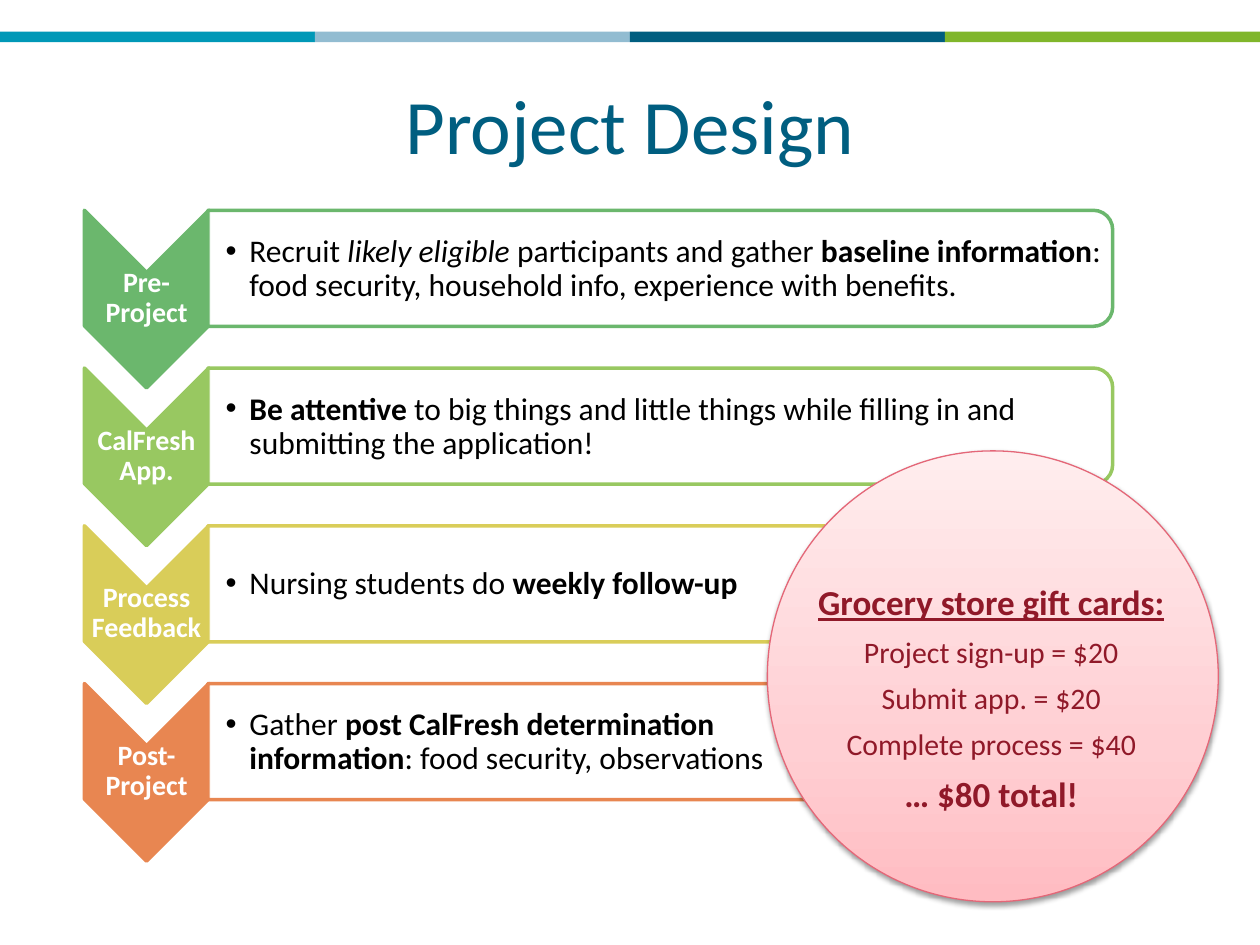
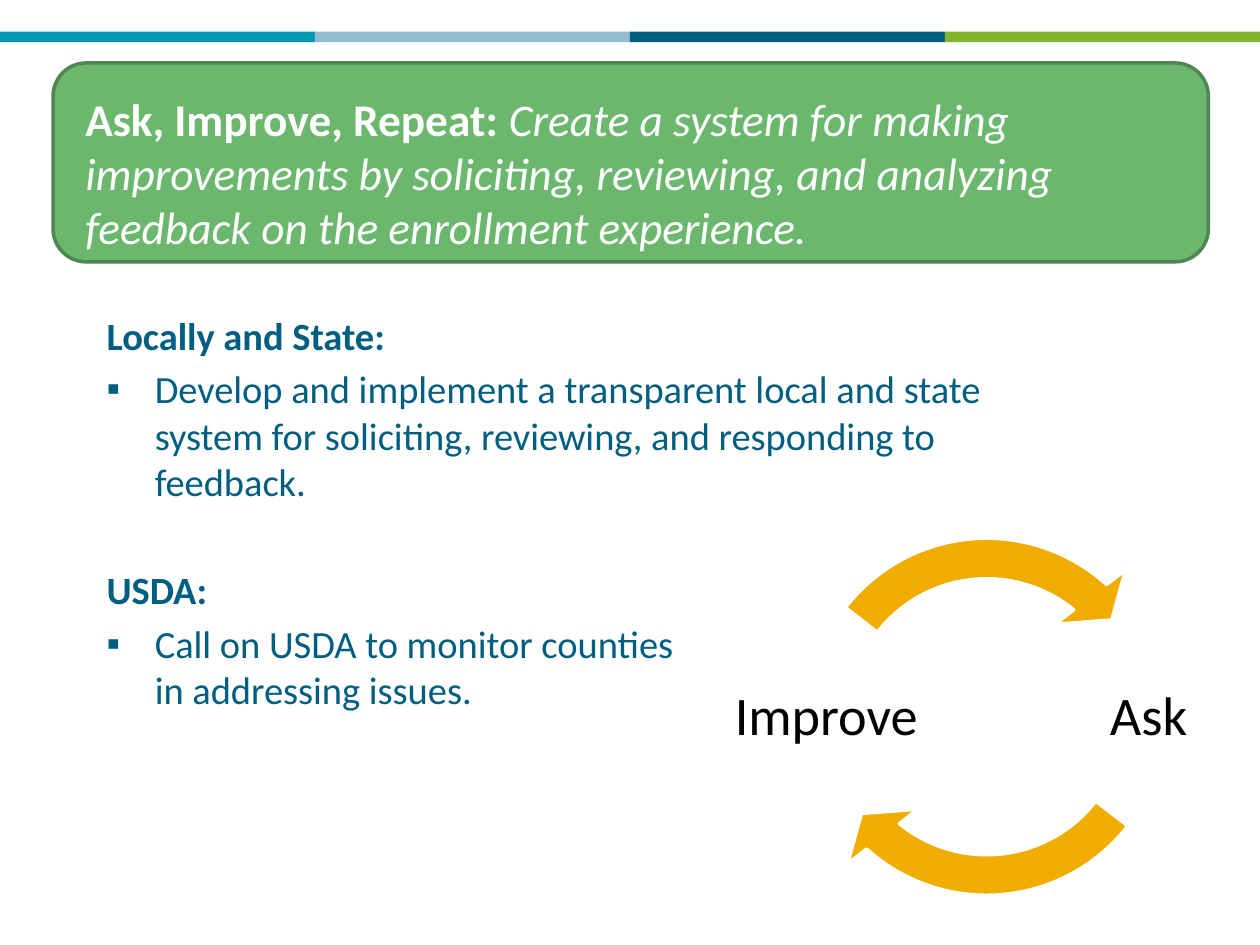
from collections import namedtuple
from copy import deepcopy

from lxml import etree
from pptx import Presentation
from pptx import util as u
from pptx.dml.color import RGBColor
from pptx.enum import shapes, text
from pptx.oxml.ns import qn

FONT = "Calibri"
WHITE = RGBColor(0xFF, 0xFF, 0xFF)
BLACK = RGBColor(0, 0, 0)
NAVY = RGBColor(0x00, 0x5E, 0x80)
TEAL = RGBColor(0x00, 0x98, 0xB7)
PALE_BLUE = RGBColor(0x92, 0xBC, 0xD1)
LEAF = RGBColor(0x80, 0xB6, 0x2B)
GREEN = RGBColor(0x6B, 0xB7, 0x6D)
DARK_GREEN = RGBColor(0x4F, 0x87, 0x51)
LIME = RGBColor(0x98, 0xC8, 0x61)
YELLOW = RGBColor(0xD9, 0xCD, 0x59)
ORANGE = RGBColor(0xE8, 0x86, 0x51)
AMBER = RGBColor(0xF0, 0xAD, 0x00)
ROSE = RGBColor(0xE4, 0x67, 0x78)
WINE = RGBColor(0x90, 0x19, 0x29)
PINKS = [(0, RGBColor(0xFF, 0xBC, 0xC2)), (0.35, RGBColor(0xFF, 0xCF, 0xD3)),
         (1, RGBColor(0xFF, 0xED, 0xEE))]

LEFT, CENTER = text.PP_ALIGN.LEFT, text.PP_ALIGN.CENTER
TOP, MIDDLE = text.MSO_ANCHOR.TOP, text.MSO_ANCHOR.MIDDLE
SHAPE = shapes.MSO_SHAPE

# runs: (words, style) pairs, the style holding any of b, i, u; "\n" breaks the line
Para = namedtuple("Para", "runs bullet indent before size", defaults=("", 0, 0, None))


def set_bullet(paragraph, char, indent, color):
    """Set a hanging bullet, or remove the inherited one when char is empty."""
    props = paragraph._p.get_or_add_pPr()
    props.set("marL", str(u.Cm(indent)))
    props.set("indent", str(-u.Cm(indent)))
    if not char:
        etree.SubElement(props, qn("a:buNone"))
        return
    tint = etree.SubElement(props, qn("a:buClr"))
    etree.SubElement(tint, qn("a:srgbClr"), val=str(color))
    etree.SubElement(props, qn("a:buFont"), typeface="Arial")
    etree.SubElement(props, qn("a:buChar"), char=char)


def write(frame, paras, *, size, color, align=LEFT, anchor=TOP, spacing=None,
          margins=(0.25, 0.13, 0.25, 0.13)):
    """Fill a text frame; margins are left, top, right, bottom in cm."""
    frame.word_wrap = True
    frame.auto_size = text.MSO_AUTO_SIZE.NONE
    frame.vertical_anchor = anchor
    (frame.margin_left, frame.margin_top,
     frame.margin_right, frame.margin_bottom) = map(u.Cm, margins)
    for index, para in enumerate(paras):
        paragraph = frame.add_paragraph() if index else frame.paragraphs[0]
        set_bullet(paragraph, para.bullet, para.indent, color)
        paragraph.alignment = align
        paragraph.space_before = u.Pt(para.before)
        if spacing:
            paragraph.line_spacing = spacing
        for words, style in para.runs:
            if words == "\n":
                paragraph.add_line_break()
                continue
            run = paragraph.add_run()
            run.text = words
            font = run.font
            font.name, font.size = FONT, u.Pt(para.size or size)
            font.color.rgb = color
            font.bold, font.italic, font.underline = (s in style for s in "biu")


class Deck:
    def __init__(self):
        self.prs = Presentation()
        self.prs.slide_width, self.prs.slide_height = u.Cm(25.4), u.Cm(19.05)
        self.slide = None

    def add_slide(self, layout):
        self.slide = self.prs.slides.add_slide(self.prs.slide_layouts[layout])

    def master_bands(self):
        """Put the coloured strip on the master, so that every slide shows it."""
        master = self.prs.slide_master.shapes.element
        for index, color in enumerate((TEAL, PALE_BLUE, NAVY, LEAF)):
            band = self.shape(SHAPE.RECTANGLE, 6.35 * index, 0.64, 6.35, 0.21, color)
            master.append(band.element)

    def shape(self, kind, left, top, width, height, fill, line=None, weight=2):
        shape = self.slide.shapes.add_shape(kind, *map(u.Cm, (left, top, width, height)))
        shape.shadow.inherit = False
        shape.fill.solid()
        shape.fill.fore_color.rgb = fill
        if line is None:
            shape.line.fill.background()
        else:
            shape.line.color.rgb = line
            shape.line.width = u.Pt(weight)
        return shape

    def turned(self, kind, left, top, width, height, fill, line):
        """Add a shape rotated by 90 degrees that covers the given box."""
        shift = (width - height) / 2
        shape = self.shape(kind, left + shift, top - shift, height, width, fill, line)
        shape.rotation = 90
        return shape

    def label(self, left, top, width, height, paras, **style):
        box = self.slide.shapes.add_textbox(*map(u.Cm, (left, top, width, height)))
        write(box.text_frame, paras, **style)

    def placeholder(self, index, left, top, width, height, paras, **style):
        """Fill a template placeholder and bring it to the front."""
        holder = self.slide.placeholders[index]
        holder.left, holder.top, holder.width, holder.height = map(
            u.Cm, (left, top, width, height))
        write(holder.text_frame, paras, **style)
        self.slide.shapes.element.append(holder.element)

    def step(self, top, color, stage, detail):
        self.turned(SHAPE.CHEVRON, 1.7, top, 2.51, 3.58, color, color)
        self.label(1.7, top + 1.24, 2.51, 1.07, [Para([(stage, "b")])], size=16,
                   color=WHITE, align=CENTER, anchor=MIDDLE, spacing=0.9,
                   margins=(0.03,) * 4)
        panel = self.turned(SHAPE.ROUND_2_SAME_RECTANGLE, 4.19, top, 18.24, 2.34,
                            WHITE, color)
        tint = panel.element.spPr.find(qn("a:solidFill"))[0]
        etree.SubElement(tint, qn("a:alpha"), val="90000")
        self.label(4.19, top + 0.13, 18.14, 2.11, [Para(detail, "•", 0.48)], size=18,
                   color=BLACK, anchor=MIDDLE, spacing=0.9,
                   margins=(0.36, 0.03, 0.03, 0.03))

    def glowing_circle(self, left, top, size):
        """Add a circle with a pink gradient and a soft shadow."""
        circle = self.shape(SHAPE.OVAL, left, top, size, size, WHITE, ROSE, 0.75)
        circle.fill.gradient()
        circle.fill.gradient_angle = 90
        first = circle.element.xpath(".//a:gs")[0]
        first.addnext(deepcopy(first))
        for stop, (position, color) in zip(circle.fill.gradient_stops, PINKS):
            stop.position = position
            stop.color.rgb = color
        effects = circle.element.spPr.find(qn("a:effectLst"))
        shadow = etree.SubElement(effects, qn("a:outerShdw"), blurRad=str(u.Pt(3.1)),
                                  dist=str(u.Pt(1.6)), dir="5400000", rotWithShape="0")
        tint = etree.SubElement(shadow, qn("a:srgbClr"), val="000000")
        etree.SubElement(tint, qn("a:alpha"), val="38000")

    def cycle_arrow(self, end, start):
        arrow = self.shape(SHAPE.CIRCULAR_ARROW, 15.8, 10.36, 8.18, 8.18, AMBER, WHITE)
        for index, value in enumerate((0.1, 6.84, end, start, 0.11)):
            arrow.adjustments[index] = value


STEPS = [
    (GREEN, "Pre-Project",
     [("Recruit ", ""), ("likely eligible", "i"), (" participants and gather ", ""),
      ("baseline information", "b"),
      (": food security, household info, experience with benefits.", "")]),
    (LIME, "CalFresh App.",
     [("Be attentive ", "b"),
      ("to big things and little things while filling in and submitting "
       "the application!", "")]),
    (YELLOW, "Process Feedback",
     [("Nursing students do ", ""), ("weekly follow-up", "b")]),
    (ORANGE, "Post-Project",
     [("Gather ", ""), ("post CalFresh determination", "b"), ("\n", ""),
      ("information", "b"), (": food security, observations", "")]),
]

GIFT_CARDS = [
    Para([("Grocery store gift cards:", "bu")], size=20),
    *(Para([(line, "")], before=6) for line in (
        "Project sign-up = $20", "Submit app. = $20", "Complete process = $40")),
    Para([("… $80 total!", "b")], before=6, size=20),
]

BANNER = [Para([
    ("Ask, Improve, Repeat: ", "b"),
    ("Create a system for making improvements by soliciting, reviewing, and "
     "analyzing feedback on the enrollment experience.", "i")])]

REQUESTS = [
    Para([("Locally and State:", "b")]),
    Para([("Develop and implement a transparent local and state system for "
           "soliciting, reviewing, and responding to feedback.", "")], "▪", 0.97, 4.4),
    Para([("USDA:", "b")], before=35.5),
    Para([("Call on USDA to monitor counties", ""), ("\n", ""),
          ("in addressing issues.", "")], "▪", 0.97, 4.4),
]


def project_design(deck):
    for index, (color, stage, detail) in enumerate(STEPS):
        deck.step(4.24 + 3.18 * index, color, stage, detail)
    deck.glowing_circle(15.47, 9.09, 9.09)
    deck.label(15.44, 11.58, 9.09, 5.56, GIFT_CARDS, size=17, color=WINE, align=CENTER)
    deck.placeholder(0, 1.27, 1.27, 22.86, 2.46, [Para([("Project Design", "")])],
                     size=44, color=NAVY, align=CENTER, anchor=MIDDLE)


def ask_improve_repeat(deck):
    deck.shape(SHAPE.ROUNDED_RECTANGLE, 1.07, 1.27, 23.29, 4.01, GREEN, DARK_GREEN)
    deck.placeholder(0, 1.47, 1.7, 22.23, 3.25, BANNER, size=25.9, color=WHITE)
    deck.placeholder(1, 1.9, 6.15, 20.32, 12.57, REQUESTS, size=22, color=NAVY)
    for left, word, end, start in ((21.16, "Ask", 78.54, 22.62),
                                   (14.66, "Improve", 186.54, 130.62)):
        deck.label(left, 12.47, 3.99, 3.99, [Para([(word, "")])], size=31, color=BLACK,
                   align=CENTER, anchor=MIDDLE, spacing=0.9, margins=(0.1,) * 4)
        deck.cycle_arrow(end, start)


def main():
    deck = Deck()
    deck.add_slide(5)
    deck.master_bands()
    project_design(deck)
    deck.add_slide(1)
    ask_improve_repeat(deck)
    deck.prs.save("out.pptx")


if __name__ == "__main__":
    main()
